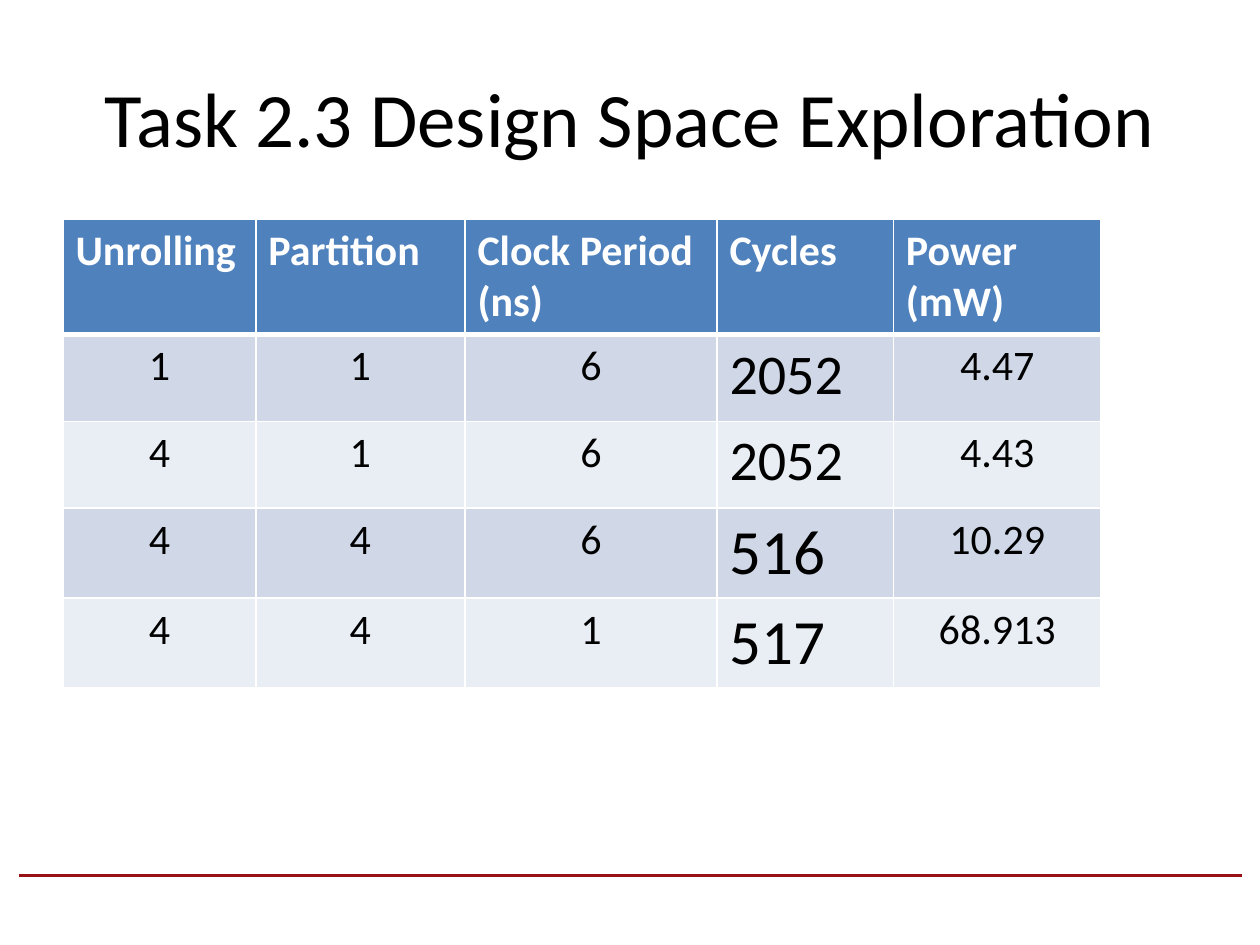
from lxml import etree
from pptx import Presentation
from pptx.dml.color import RGBColor
from pptx.enum.shapes import MSO_CONNECTOR
from pptx.enum.text import MSO_ANCHOR, PP_ALIGN
from pptx.oxml.ns import qn
from pptx.util import Inches, Pt

STRAIGHT = MSO_CONNECTOR.STRAIGHT
MIDDLE = MSO_ANCHOR.MIDDLE
LEFT, CENTER = PP_ALIGN.LEFT, PP_ALIGN.CENTER

FONT = "Calibri"
COLORS = {
    "text": "000000",
    "white": "FFFFFF",
    "header": "4F81BD",
    "odd_row": "D0D8E8",
    "even_row": "E9EDF4",
    "rule": "971217",
}
HEADERS = ["Unrolling", "Partition", "Clock Period (ns)", "Cycles", "Power (mW)"]
RESULTS = [
    ["1", "1", "6", "2052", "4.47"],
    ["4", "1", "6", "2052", "4.43"],
    ["4", "4", "6", "516", "10.29"],
    ["4", "4", "1", "517", "68.913"],
]
COLUMN_WIDTHS = [1.53, 1.66, 2, 1.4, 1.65]
ROW_HEIGHT = 0.69
CYCLES_COLUMN = HEADERS.index("Cycles")
CYCLES_SIZES = [32, 32, 36, 36]


def format_paragraph(paragraph, size, color, alignment, bold=False):
    paragraph.alignment = alignment
    paragraph.font.name = FONT
    paragraph.font.size = Pt(size)
    paragraph.font.bold = bold
    paragraph.font.color.rgb = RGBColor.from_string(COLORS[color])


def add_border(cell, side, width):
    line = etree.SubElement(cell._tc.get_or_add_tcPr(), qn(f"a:ln{side}"), w=str(Pt(width)))
    fill = etree.SubElement(line, qn("a:solidFill"))
    etree.SubElement(fill, qn("a:srgbClr"), val=COLORS["white"])


presentation = Presentation()
presentation.slide_width = Inches(10)
presentation.slide_height = Inches(7.5)
slide = presentation.slides.add_slide(presentation.slide_layouts[5])

# Footer rule
rule = slide.shapes.add_connector(
    STRAIGHT, Inches(0.15), Inches(6.95), Inches(9.86), Inches(6.95))
rule.line.color.rgb = RGBColor.from_string(COLORS["rule"])
rule.line.width = Pt(2)
etree.SubElement(rule._element.spPr, qn("a:effectLst"))

# Title
title = slide.shapes.title
title.left, title.top = Inches(0.5), Inches(0.3)
title.width, title.height = Inches(9), Inches(1.25)
title.text_frame.text = "Task 2.3 Design Space Exploration"
title.text_frame.vertical_anchor = MIDDLE
format_paragraph(title.text_frame.paragraphs[0], 44, "text", CENTER)

# Results table
rows = [HEADERS] + RESULTS
table = slide.shapes.add_table(
    len(rows), len(HEADERS), Inches(0.5), Inches(1.74),
    Inches(sum(COLUMN_WIDTHS)), Inches(ROW_HEIGHT * len(rows))).table
for column, width in zip(table.columns, COLUMN_WIDTHS):
    column.width = Inches(width)

for row_index, values in enumerate(rows):
    table.rows[row_index].height = Inches(ROW_HEIGHT)
    is_header = row_index == 0
    if is_header:
        fill_color = "header"
    else:
        fill_color = "odd_row" if row_index % 2 else "even_row"
    for column_index, value in enumerate(values):
        cell = table.cell(row_index, column_index)
        cell.text = value
        paragraph = cell.text_frame.paragraphs[0]
        if is_header:
            format_paragraph(paragraph, 24, "white", LEFT, bold=True)
        elif column_index == CYCLES_COLUMN:
            format_paragraph(paragraph, CYCLES_SIZES[row_index - 1], "text", LEFT)
        else:
            format_paragraph(paragraph, 24, "text", CENTER)

        # A thicker line parts the header from the results
        add_border(cell, "L", 1)
        add_border(cell, "R", 1)
        add_border(cell, "T", 3 if row_index == 1 else 1)
        add_border(cell, "B", 3 if is_header else 1)
        cell.fill.solid()
        cell.fill.fore_color.rgb = RGBColor.from_string(COLORS[fill_color])

presentation.save("out.pptx")
